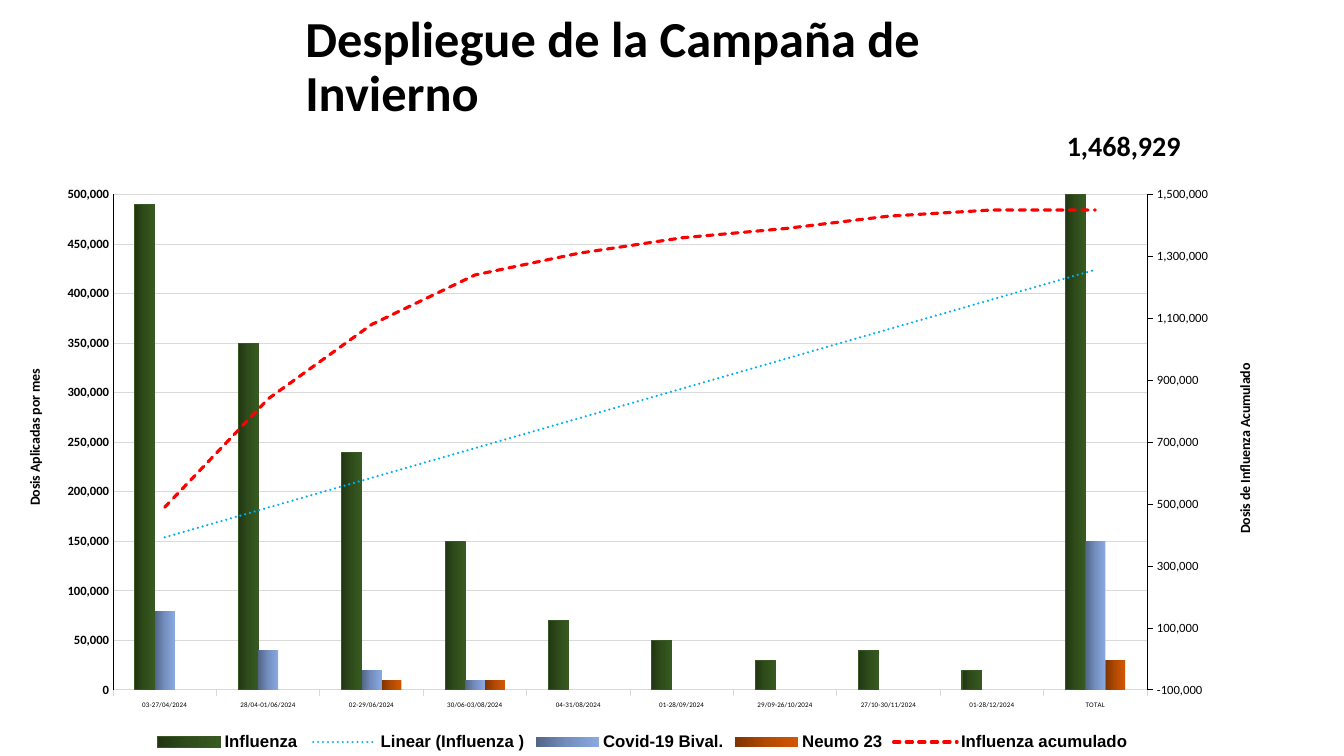
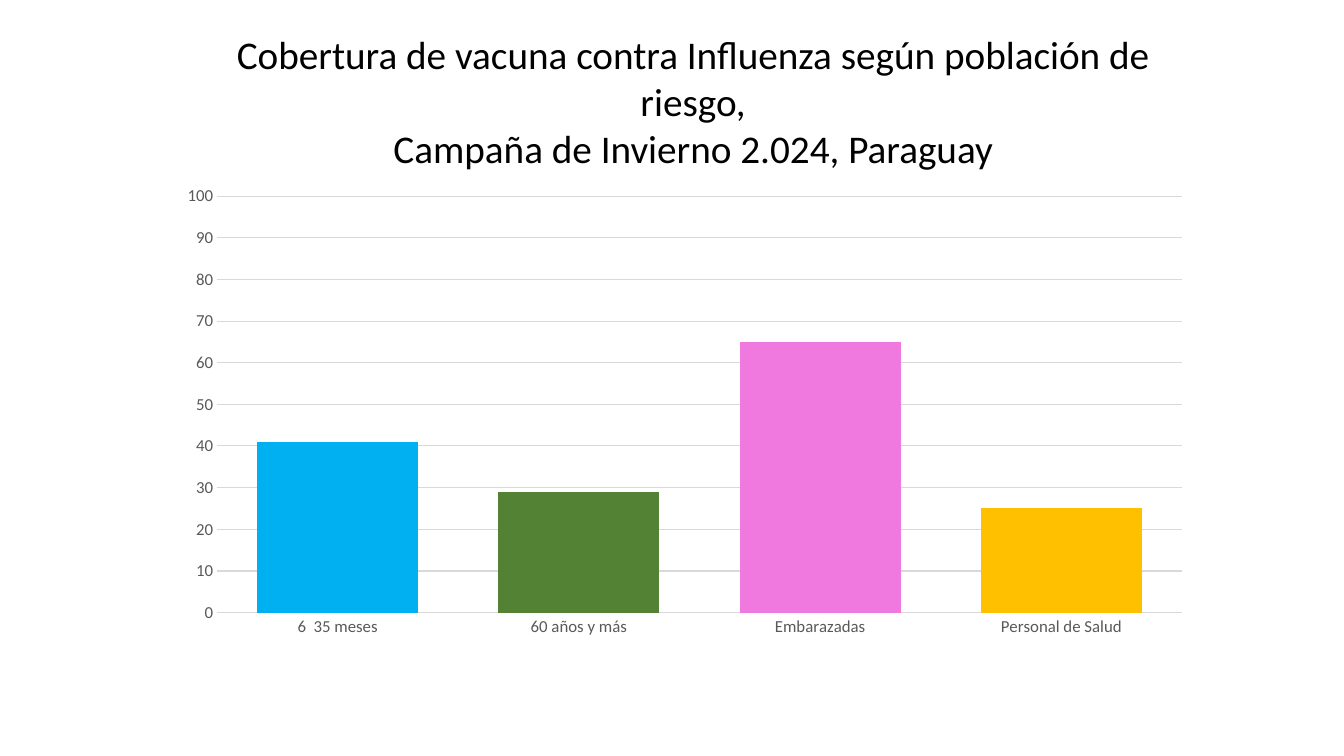
from copy import deepcopy

from pptx import Presentation, util as u
from pptx.chart import axis as ax, data
from pptx.dml.color import RGBColor
from pptx.enum import chart as ce, dml, shapes, text
from pptx.oxml import parse_xml
from pptx.oxml.ns import nsdecls, qn

PX = 9144  # 100 px to the inch
FONT = "Calibri"
BLACK, WHITE, GREY, GRID = "000000", "FFFFFF", "595959", "D9D9D9"
RED, SKY = "FF0000", "00B0F0"

PERIODS = ["03-27/04/2024", "28/04-01/06/2024", "02-29/06/2024",
           "30/06-03/08/2024", "04-31/08/2024", "01-28/09/2024",
           "29/09-26/10/2024", "27/10-30/11/2024", "01-28/12/2024", "TOTAL"]
# Doses in tens of thousands
DOSES = {
    "Influenza ": [49, 35, 24, 15, 7, 5, 3, 4, 2, 145],
    "Covid-19 Bival.": [8, 4, 2, 1, 0, 0, 0, 0, 0, 15],
    "Neumo 23": [0, 0, 1, 1, 0, 0, 0, 0, 0, 3],
    "Influenza acumulado": [49, 84, 108, 124, 131, 136, 139, 143, 145, 145],
}
GRADIENTS = [("213613", "2F4C1B", "375A20"),
             ("516486", "748EBE", "89A9E1"),
             ("7D3402", "B24A03", "D35704")]
COVERAGE = {"6  35 meses": (41, SKY), "60 años y más": (29, "548235"),
            "Embarazadas": (65, "EF79DE"), "Personal de Salud": (25, "FFC000")}


def px(*lengths):
    return [u.Emu(n * PX) for n in lengths]


def rgb(value):
    return RGBColor.from_string(value)


def set_font(font, size, color=BLACK, bold=False, name=FONT):
    font.size, font.bold, font.name = u.Pt(size), bold, name
    font.color.rgb = rgb(color)


def set_line(line, color, width=0.75):
    line.color.rgb = rgb(color)
    line.width = u.Pt(width)


def add_text(s, box, lines, size, bold=False, align=text.PP_ALIGN.LEFT,
             anchor=text.MSO_ANCHOR.TOP, spacing=1.0, fill=None):
    if fill:
        sp = s.shapes.add_shape(shapes.MSO_SHAPE.RECTANGLE, *px(*box))
        sp.shadow.inherit = False
        sp.fill.solid()
        sp.fill.fore_color.rgb = rgb(fill)
        sp.line.fill.background()
    else:
        sp = s.shapes.add_textbox(*px(*box))
    tf = sp.text_frame
    tf.word_wrap = True
    tf.vertical_anchor = anchor
    tf.text = "\n".join(lines)
    for p in tf.paragraphs:
        p.alignment, p.line_spacing = align, spacing
        set_font(p.font, size, bold=bold)


def set_layout(parent, index, x, y, w=None, h=None):
    """Place a plot area (with size) or a title (without) by chart fractions."""
    for old in parent.findall(qn("c:layout")):
        parent.remove(old)
    target = '<c:layoutTarget val="inner"/>' if w else ""
    modes = "".join(f'<c:{k}Mode val="edge"/>' for k in "xy")
    places = "".join(f'<c:{k} val="{v}"/>'
                     for k, v in zip("xywh", (x, y, w, h)) if v is not None)
    parent.insert(index, parse_xml(
        f'<c:layout {nsdecls("c")}><c:manualLayout>{target}{modes}{places}'
        '</c:manualLayout></c:layout>'))


def add_columns(s, box, categories, series, gap, overlap, plot):
    cd = data.CategoryChartData()
    cd.categories = categories
    for name, values in series.items():
        cd.add_series(name, values)
    chart = s.shapes.add_chart(ce.XL_CHART_TYPE.COLUMN_CLUSTERED,
                               *px(*box), cd).chart
    set_font(chart.font, 10)
    chart.has_title = chart.has_legend = False
    bars = chart.plots[0]
    bars.gap_width, bars.overlap, bars.vary_by_categories = gap, overlap, False
    set_layout(chart.element.xpath(".//c:plotArea")[0], 0, *plot)
    return chart


def style_axis(axis, size, color, tick=ce.XL_TICK_MARK.NONE, bold=False,
               line=None):
    axis.major_tick_mark = tick
    set_font(axis.tick_labels.font, size, color, bold)
    if line:
        set_line(axis.format.line, line)
    else:
        axis.format.line.fill.background()


def scale_axis(axis, low, high, step, number_format, grid=True):
    axis.minimum_scale, axis.maximum_scale, axis.major_unit = low, high, step
    axis.tick_labels.number_format = number_format
    axis.tick_labels.number_format_is_linked = False
    axis.has_major_gridlines = grid
    if grid:
        set_line(axis.major_gridlines.format.line, GRID)


def add_axis_title(axis, caption, x, y):
    title = axis.axis_title
    title.text_frame.text = caption
    set_font(title.text_frame.paragraphs[0].font, 10, bold=True)
    body = title.element.xpath(".//a:bodyPr")[0]
    body.set("rot", "-5400000")
    body.set("vert", "horz")
    set_layout(title.element, 1, x, y)


def move_last_to_line(chart):
    """Turn the last column series into a line on a second value axis."""
    area = chart.element.xpath(".//c:plotArea")[0]
    ser = area.xpath("./c:barChart/c:ser")[-1]
    for flag in ser.findall(qn("c:invertIfNegative")):
        ser.remove(flag)
    line = parse_xml(
        f'<c:lineChart {nsdecls("c")}><c:grouping val="standard"/>'
        '<c:varyColors val="0"/><c:marker val="1"/>'
        '<c:axId val="5001"/><c:axId val="5002"/></c:lineChart>')
    line.insert(2, ser)
    area.find(qn("c:barChart")).addnext(line)
    cat, val = (deepcopy(area.find(qn(tag))) for tag in ("c:catAx", "c:valAx"))
    for el, own, other in ((cat, "5001", "5002"), (val, "5002", "5001")):
        el.find(qn("c:axId")).set("val", own)
        el.find(qn("c:crossAx")).set("val", other)
    val.find(qn("c:axPos")).set("val", "r")
    val.find(qn("c:crosses")).set("val", "max")
    area.findall(qn("c:valAx"))[-1].addnext(val)
    val.addnext(cat)
    ax.CategoryAxis(cat).visible = False
    return ax.ValueAxis(val)


def fill_gradient(series, ser, colors):
    fill = series.format.fill
    fill.gradient()
    fill.gradient_angle = 0
    stops = ser.xpath("./c:spPr//a:gsLst")[0]
    stops.insert(1, deepcopy(stops[0]))
    for stop, color, position in zip(fill.gradient_stops, colors, (0, 0.5, 1)):
        stop.color.rgb = rgb(color)
        stop.position = position


def add_trend(ser, color, width):
    ser.find(qn("c:cat")).addprevious(parse_xml(
        f'<c:trendline {nsdecls("c", "a")}><c:spPr>'
        f'<a:ln w="{u.Pt(width)}" cap="rnd"><a:solidFill>'
        f'<a:srgbClr val="{color}"/></a:solidFill><a:prstDash val="sysDot"/>'
        '</a:ln></c:spPr><c:trendlineType val="linear"/>'
        '<c:dispRSqr val="0"/><c:dispEq val="0"/></c:trendline>'))


def campaign_slide(s):
    add_text(s, (293, 35, 769, 65), ["Despliegue de la Campaña de Invierno"],
             36, bold=True, anchor=text.MSO_ANCHOR.MIDDLE, spacing=0.9)
    add_text(s, (976, 123, 205, 44), ["1,468,929"], 20, bold=True,
             align=text.PP_ALIGN.RIGHT, fill=WHITE)
    doses = {name: [v * 10000 for v in vals] for name, vals in DOSES.items()}
    chart = add_columns(s, (0, 174, 1274, 575), PERIODS, doses, 219, 0,
                        (0.088, 0.033, 0.805, 0.855))
    left = chart.value_axis  # taken before the second value axis exists
    right = move_last_to_line(chart)

    # Axes
    out = ce.XL_TICK_MARK.OUTSIDE
    style_axis(chart.category_axis, 5, BLACK, out, line=GRID)
    style_axis(left, 9, BLACK, bold=True, line=BLACK)
    scale_axis(left, 0, 500000, 50000, "#,##0")
    add_axis_title(left, "Dosis Aplicadas por mes", 0.018, 0.33)
    style_axis(right, 9, BLACK, out, line=BLACK)
    scale_axis(right, -100000, 1500000, 200000, "#,##0", grid=False)
    add_axis_title(right, "Dosis de Influenza Acumulado", 0.96, 0.32)

    # Series
    bars, lines = chart.plots
    sers = chart.element.xpath(".//c:barChart/c:ser")
    for series, ser, colors in zip(bars.series, sers, GRADIENTS):
        fill_gradient(series, ser, colors)
    set_line(bars.series[0].format.line, "385723")
    add_trend(sers[0], SKY, 1.75)
    total = lines.series[0]
    set_line(total.format.line, RED, 2.25)
    total.format.line.dash_style = dml.MSO_LINE.SQUARE_DOT
    chart.element.xpath(".//c:lineChart/c:ser/c:spPr/a:ln")[0].set("cap", "rnd")
    total.marker.style = ce.XL_MARKER_STYLE.NONE
    total.smooth = False

    # Legend
    chart.has_legend = True
    chart.legend.position = ce.XL_LEGEND_POSITION.BOTTOM
    chart.legend.include_in_layout = False
    set_font(chart.legend.font, 12, bold=True, name="Arial")


def coverage_slide(s):
    add_text(s, (181, 25, 1013, 104),
             ["Cobertura de vacuna contra Influenza según población de riesgo,",
              "Campaña de Invierno 2.024, Paraguay"],
             28, align=text.PP_ALIGN.CENTER)
    values = [value for value, _ in COVERAGE.values()]
    chart = add_columns(s, (166, 175, 1028, 466), list(COVERAGE),
                        {"Series 1": values}, 50, -27,
                        (0.048, 0.042, 0.931, 0.887))
    style_axis(chart.category_axis, 12, GREY, line=GRID)
    style_axis(chart.value_axis, 12, GREY)
    scale_axis(chart.value_axis, 0, 100, 10, "0")
    series = chart.plots[0].series[0]
    for i, (_, color) in enumerate(COVERAGE.values()):
        fill = series.points[i].format.fill
        fill.solid()
        fill.fore_color.rgb = rgb(color)


def main():
    prs = Presentation()
    prs.slide_width, prs.slide_height = px(1333, 750)
    for build in (campaign_slide, coverage_slide):
        build(prs.slides.add_slide(prs.slide_layouts[6]))
    prs.save("out.pptx")


if __name__ == "__main__":
    main()
